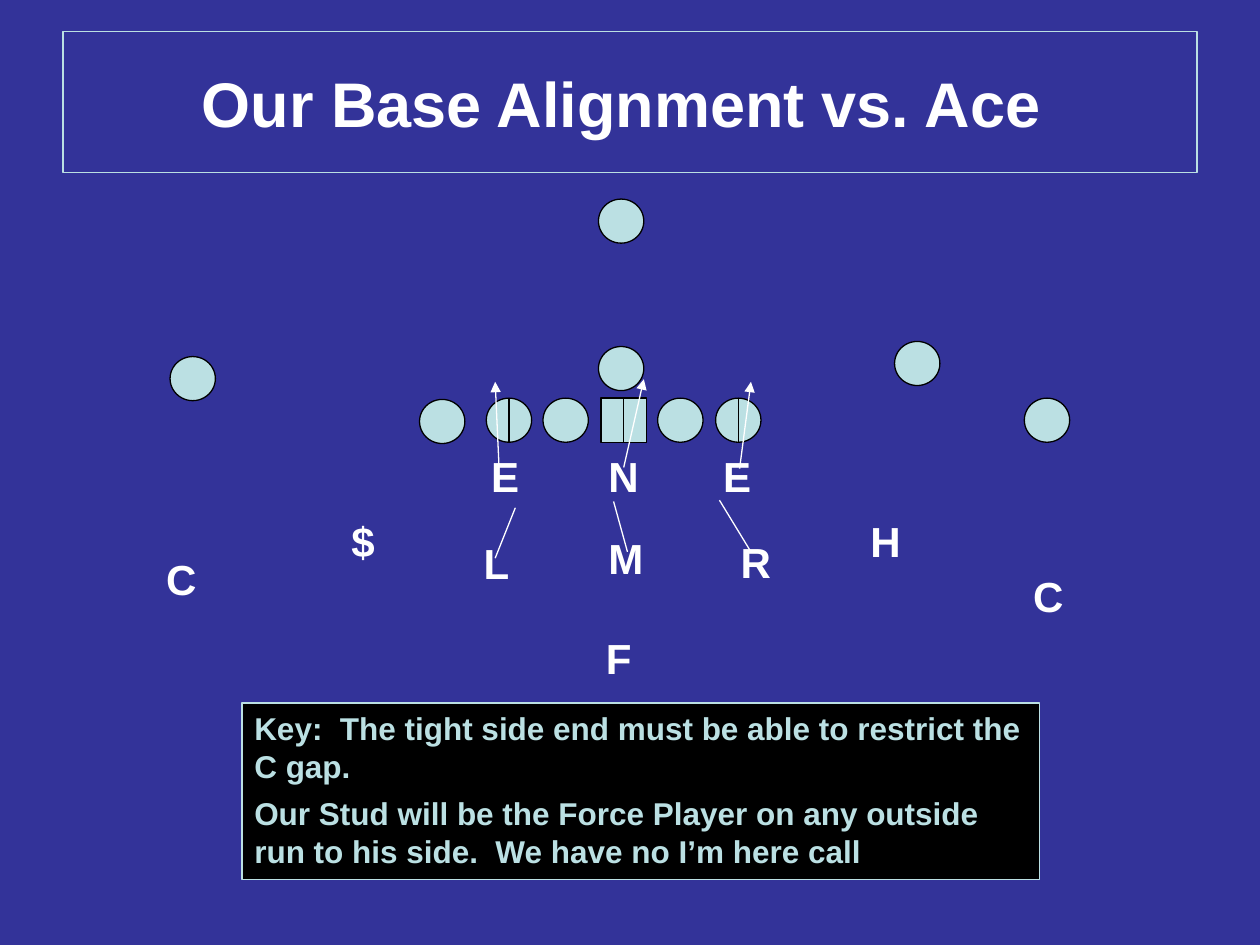
"""Builds a football slide showing the base defensive alignment against Ace."""
from pptx import Presentation
from pptx.dml.color import RGBColor
from pptx.enum.shapes import MSO_CONNECTOR as Connector, MSO_SHAPE as Shape
from pptx.enum.text import MSO_ANCHOR as Anchor, MSO_AUTO_SIZE as AutoSize, PP_ALIGN as Align
from pptx.oxml.ns import qn
from pptx.util import Inches, Pt
from lxml.etree import SubElement

COLORS = {"field": "333399", "pale": "BBE0E3", "white": "FFFFFF", "black": "000000"}
TITLE = "Our Base Alignment vs. Ace "
KEY_NOTES = [
    "Key:  The tight side end must be able to restrict the C gap.",
    "Our Stud will be the Force Player on any outside run to his side.  We have no I’m here call",
]
MARKER_WIDTH, MARKER_HEIGHT = 0.36, 0.35
LINE_TOP = 3.16
CENTER_LEFT = 4.77
LINEMEN = [3.86, 4.31, 5.22, 5.68]
TACKLES = [3.86, 5.68]
SKILL_PLAYERS = [(4.75, 1.58), (1.35, 2.83), (7.1, 2.71), (4.75, 2.75), (3.33, 3.17), (8.13, 3.16)]
DEFENDERS = [
    ("E", 3.8, 3.53), ("N", 4.73, 3.53), ("E", 5.64, 3.53),
    ("L", 3.74, 4.22), ("M", 4.73, 4.18), ("R", 5.78, 4.21),
    ("$", 2.69, 4.04), ("H", 6.81, 4.04),
    ("C", 1.22, 4.34), ("C", 8.1, 4.48), ("F", 4.71, 4.97),
]
RUSHES = [((3.96, 3.69), (3.93, 3.03)), ((4.95, 3.71), (5.11, 3.01)), ((5.87, 3.72), (5.96, 3.03))]
FILLS = [((3.93, 4.43), (4.09, 4.03)), ((4.98, 4.38), (4.87, 3.98)), ((5.96, 4.38), (5.71, 3.97))]


class Diagram:
    """Holds the style and the current slide, and draws each kind of element."""

    def __init__(self, slide, font="Arial", line_width=0.75):
        self.slide = slide
        self.font = font
        self.line_width = Pt(line_width)
        self.paint(slide.background.fill, "field")

    def paint(self, fill, color):
        fill.solid()
        fill.fore_color.rgb = RGBColor.from_string(COLORS[color])

    def outline(self, line, color):
        self.paint(line.fill, color)
        line.width = self.line_width

    def set_text(self, para, text, size, color):
        para.text = text
        para.font.name = self.font
        para.font.size = Pt(size)
        para.font.bold = True
        para.font.color.rgb = RGBColor.from_string(COLORS[color])

    def title(self, text, left, top, width, height):
        box = self.slide.shapes.title
        box.left, box.top, box.width, box.height = map(Inches, (left, top, width, height))
        self.paint(box.fill, "field")
        self.outline(box.line, "pale")
        frame = box.text_frame
        frame.auto_size = AutoSize.NONE
        frame.vertical_anchor = Anchor.MIDDLE
        self.set_text(frame.paragraphs[0], text, 36, "white")
        frame.paragraphs[0].alignment = Align.CENTER

    def marker(self, left, top, kind=Shape.OVAL):
        shape = self.slide.shapes.add_shape(
            kind, Inches(left), Inches(top), Inches(MARKER_WIDTH), Inches(MARKER_HEIGHT))
        shape.shadow.inherit = False
        self.paint(shape.fill, "pale")
        self.outline(shape.line, "black")
        return shape

    def text(self, notes, left, top, width, height, size=24, color="white", spacing=12):
        box = self.slide.shapes.add_textbox(*map(Inches, (left, top, width, height)))
        frame = box.text_frame
        frame.word_wrap = True
        frame.auto_size = AutoSize.SHAPE_TO_FIT_TEXT
        for index, note in enumerate(notes):
            para = frame.add_paragraph() if index else frame.paragraphs[0]
            self.set_text(para, note, size, color)
            para.space_before = Pt(spacing)
        return box

    def key(self, notes, left, top, width, height):
        box = self.text(notes, left, top, width, height, 18, "pale", 5.4)
        self.paint(box.fill, "black")
        self.outline(box.line, "pale")

    def line(self, start, end, color="white", arrow=False):
        connector = self.slide.shapes.add_connector(
            Connector.STRAIGHT, *map(Inches, (*start, *end)))
        self.outline(connector.line, color)
        properties = connector._element.spPr
        if arrow:
            SubElement(properties.find(qn("a:ln")), qn("a:tailEnd"), type="triangle")
        SubElement(properties, qn("a:effectLst"))
        return connector

    def divider(self, left):
        middle = left + MARKER_WIDTH / 2
        return self.line((middle, LINE_TOP + MARKER_HEIGHT), (middle, LINE_TOP), "black")


def main():
    deck = Presentation()
    deck.slide_width, deck.slide_height = Inches(10), Inches(7.5)
    diagram = Diagram(deck.slides.add_slide(deck.slide_layouts[5]))
    diagram.title(TITLE, 0.5, 0.25, 9, 1.12)

    center = diagram.marker(CENTER_LEFT, LINE_TOP, Shape.RECTANGLE)
    for left in LINEMEN:
        diagram.marker(left, LINE_TOP)
    for left, top in SKILL_PLAYERS:
        diagram.marker(left, top)

    center_divider = diagram.divider(CENTER_LEFT)
    center_divider.begin_connect(center, 2)
    center_divider.end_connect(center, 0)
    for left in TACKLES:
        diagram.divider(left)

    for letter, left, top in DEFENDERS:
        diagram.text([letter], left, top, 0.45, 0.5)
    for start, end in RUSHES:
        diagram.line(start, end, arrow=True)
    for start, end in FILLS:
        diagram.line(start, end)

    diagram.key(KEY_NOTES, 1.92, 5.58, 6.33, 1.4)
    deck.save("out.pptx")


if __name__ == "__main__":
    main()
